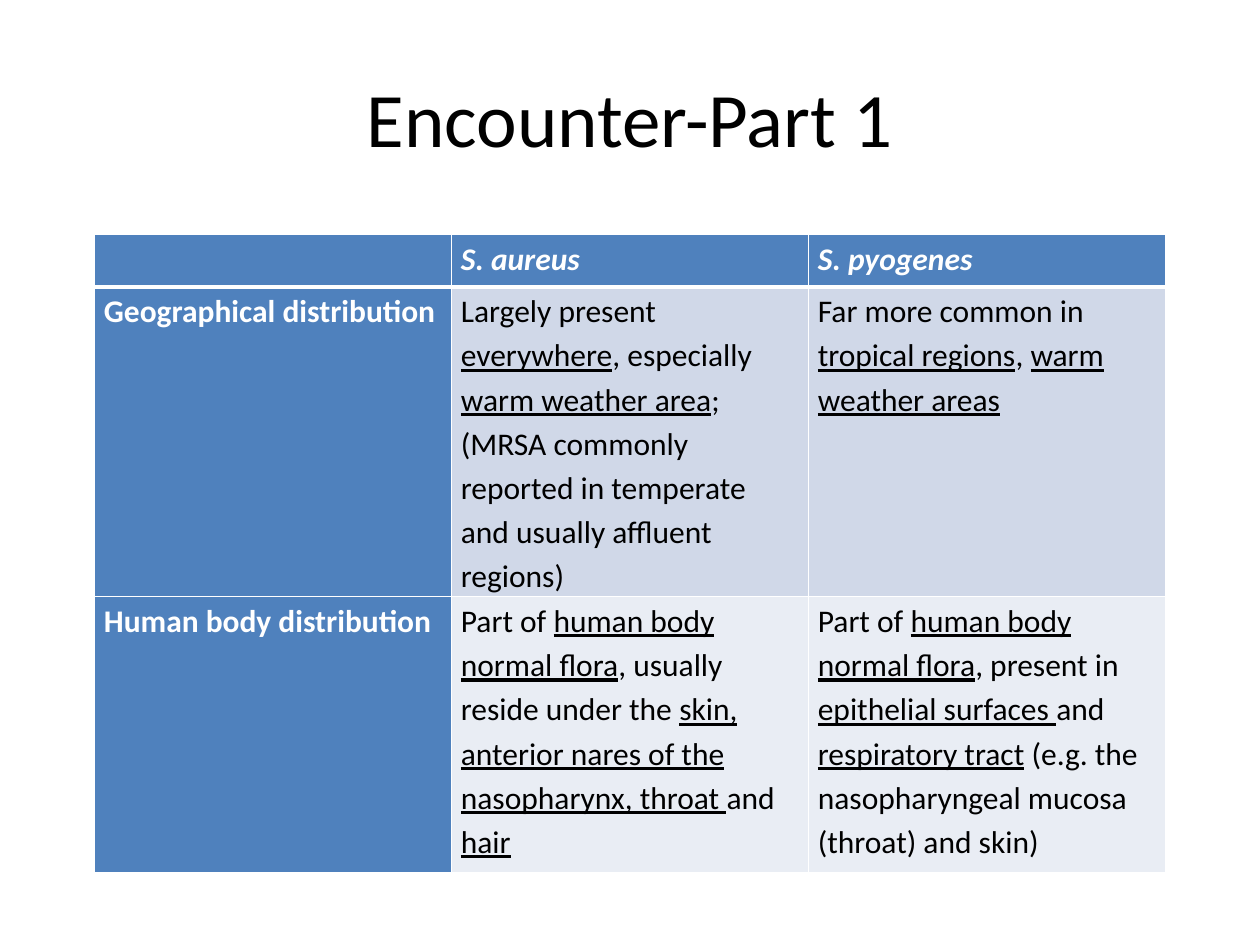
from lxml import etree
from pptx import Presentation
from pptx.dml.color import RGBColor
from pptx.enum import text
from pptx.oxml.ns import qn
from pptx.util import Pt

BLUE, WHITE, BLACK = "4F81BD", "FFFFFF", "000000"
BANDS = ["D0D8E8", "E9EDF4"]

# Underscores enclose underlined words
ROWS = [
    ["", "S. aureus", "S. pyogenes"],
    ["Geographical distribution",
     "Largely present _everywhere_, especially _warm weather area_; "
     "(MRSA commonly reported in temperate and usually affluent regions)",
     "Far more common in _tropical regions_, _warm weather areas_"],
    ["Human body distribution",
     "Part of _human body normal flora_, usually reside under the "
     "_skin, anterior nares of the nasopharynx, throat _and_ hair_",
     "Part of _human body normal flora_, present in _epithelial surfaces _"
     "and_ respiratory tract_ (e.g. the nasopharyngeal mucosa (throat) "
     "and skin)"],
]


def color(code):
    return RGBColor.from_string(code)


def write(frame, words, size=18, ink=BLACK, bold=False, italic=False,
          align=text.PP_ALIGN.LEFT, space=1.15):
    para = frame.paragraphs[0]
    para.alignment, para.line_spacing = align, space
    for i, part in enumerate(words.split("_")):
        if not part:
            continue
        run = para.add_run()
        run.text = part
        font = run.font
        font.name, font.size = "Calibri", Pt(size)
        font.bold, font.italic = bold, italic
        font.underline = i % 2 == 1
        font.color.rgb = color(ink)


def edge(cell, side, width):
    props = cell._tc.get_or_add_tcPr()
    line = etree.SubElement(props, qn("a:ln" + side), w=str(Pt(width)))
    fill = etree.SubElement(line, qn("a:solidFill"))
    etree.SubElement(fill, qn("a:srgbClr"), val=WHITE)


def title(slide, left, top, width, height):
    box = slide.shapes.title
    box.left, box.top, box.width, box.height = map(
        Pt, (left, top, width, height))
    frame = box.text_frame
    frame.vertical_anchor = text.MSO_ANCHOR.MIDDLE
    write(frame, "Encounter-Part 1", size=44,
          align=text.PP_ALIGN.CENTER, space=1)


def grid(slide, left, top, width, heights):
    cols = len(ROWS[0])
    table = slide.shapes.add_table(
        len(ROWS), cols, Pt(left), Pt(top), Pt(width),
        Pt(sum(heights))).table
    for col in table.columns:
        col.width = Pt(width / cols)
    for r, row in enumerate(ROWS):
        table.rows[r].height = Pt(heights[r])
        for c, words in enumerate(row):
            cell = table.cell(r, c)
            head = r == 0 or c == 0
            # Thick rule under the header, thin ones elsewhere
            for side in "LRTB":
                thick = (r, side) in [(0, "B"), (1, "T")]
                edge(cell, side, 3 if thick else 1)
            cell.fill.solid()
            cell.fill.fore_color.rgb = color(BLUE if head else BANDS[r - 1])
            if words:
                cell.margin_left = cell.margin_right = Pt(5.4)
                cell.margin_top = cell.margin_bottom = Pt(0)
                write(cell.text_frame, words, ink=WHITE if head else BLACK,
                      bold=head, italic=r == 0)


def main():
    deck = Presentation()
    deck.slide_width, deck.slide_height = Pt(720), Pt(540)
    slide = deck.slides.add_slide(deck.slide_layouts[5])
    title(slide, 36, 21.6, 648, 90)
    grid(slide, 54, 134, 612, [30, 177, 157.5])
    deck.save("out.pptx")


if __name__ == "__main__":
    main()
